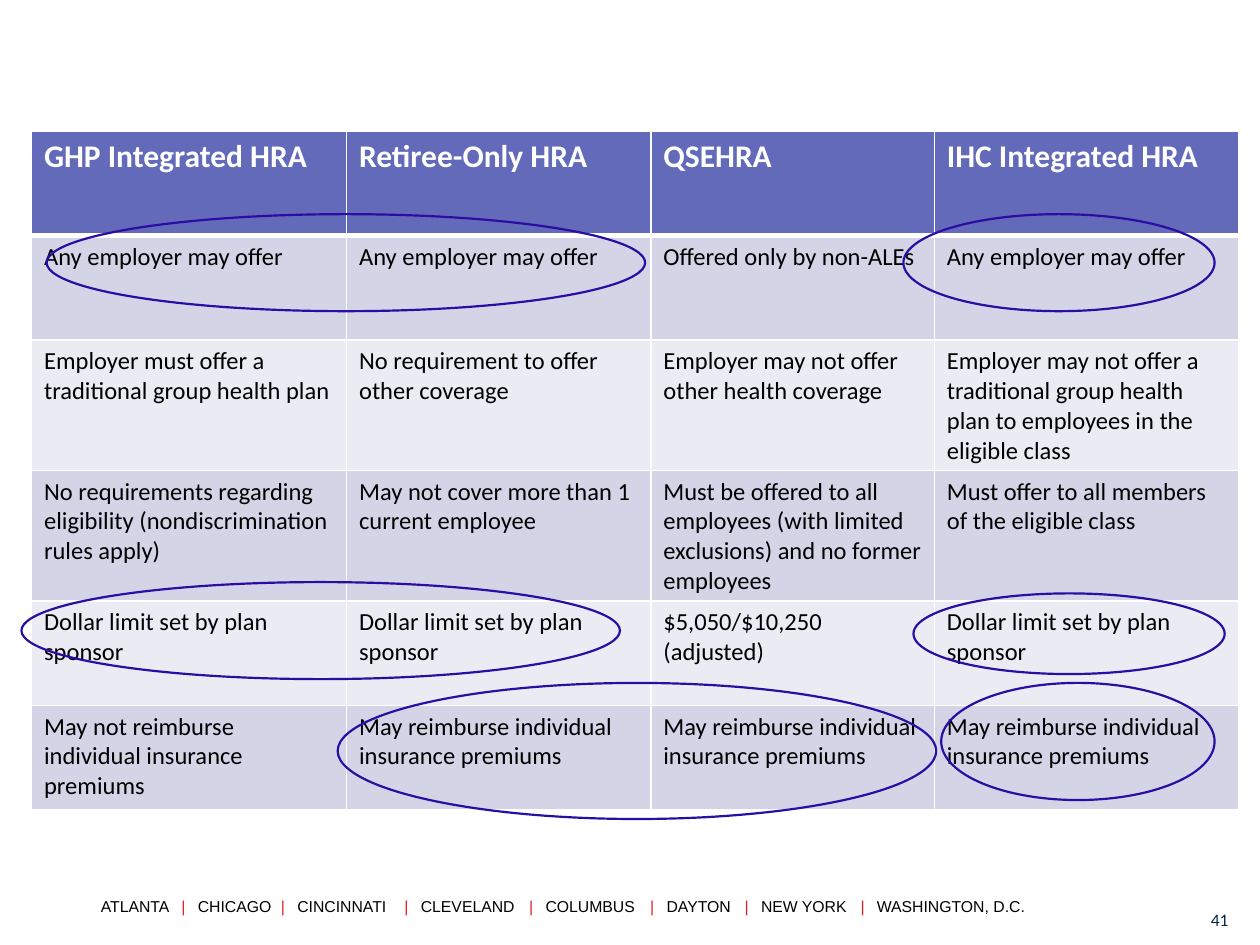
from dataclasses import dataclass

from lxml.etree import SubElement
from pptx import Presentation
from pptx.dml.color import RGBColor as RGB
from pptx.enum.shapes import MSO_SHAPE as SHAPE
from pptx.enum.text import MSO_ANCHOR as ANCHOR, PP_ALIGN as ALIGN
from pptx.oxml.ns import qn
from pptx.util import Inches, Pt

COLS, ROWS = 100, 75


@dataclass(frozen=True)
class Theme:
    white: str = "FFFFFF"
    black: str = "000000"
    header: str = "626AB9"
    bands: tuple = ("D3D4E6", "EAEBF3")
    ring: str = "2A0DA3"
    bar: str = "E31B23"
    number: str = "052B42"
    body_font: str = "Calibri"
    footer_font: str = "Arial"
    header_size: float = 18
    cell_size: float = 14
    footer_size: float = 9
    number_size: float = 10
    ring_width: float = 1.25
    border: float = 1
    header_rule: float = 3


HEADINGS = ["GHP Integrated HRA", "Retiree-Only HRA", "QSEHRA", "IHC Integrated HRA"]
ANY = "Any employer may offer"
LIMIT = "Dollar limit set by plan sponsor"
PREMIUMS = "May reimburse individual insurance premiums"
FEATURES = [
    [ANY, ANY, "Offered only by non-ALEs", ANY],
    ["Employer must offer a traditional group health plan",
     "No requirement to offer other coverage",
     "Employer may not offer other health coverage",
     "Employer may not offer a traditional group health plan to employees in the eligible class"],
    ["No requirements regarding eligibility (nondiscrimination rules apply)",
     "May not cover more than 1 current employee",
     "Must be offered to all employees (with limited exclusions) and no former employees",
     "Must offer to all members of the eligible class"],
    [LIMIT, LIMIT, "$5,050/$10,250 (adjusted)", LIMIT],
    ["May not reimburse individual insurance premiums", PREMIUMS, PREMIUMS, PREMIUMS],
]
RINGS = [
    (71.7, 17, 24.7, 7.7),
    (3.7, 17, 47.5, 7.7),
    (72.5, 47.1, 24.7, 6.4),
    (1.7, 46.2, 47.5, 7.7),
    (74.7, 54.2, 21.7, 9.3),
    (26.8, 54.2, 47.5, 10.8),
]
CITIES = ["ATLANTA", "CHICAGO", "CINCINNATI", "CLEVELAND",
          "COLUMBUS", "DAYTON", "NEW YORK", "WASHINGTON, D.C."]
BAR_STOPS = [6.4, 14.3, 24.1, 34, 43.6, 51.1, 60.3]
CITY_GAP = 1.3


class Deck:
    def __init__(self, theme):
        self.theme = theme
        self.prs = Presentation()
        self.prs.slide_width, self.prs.slide_height = Inches(10), Inches(7.5)
        self.s = self.prs.slides.add_slide(self.prs.slide_layouts[6])

    def x(self, columns):
        return round(self.prs.slide_width * columns / COLS)

    def y(self, rows):
        return round(self.prs.slide_height * rows / ROWS)

    def box(self, left, top, width, height):
        return self.x(left), self.y(top), self.x(width), self.y(height)

    def apply(self, target, **values):
        for name, value in values.items():
            setattr(target, name, value)

    def run(self, p, text, font, size, color, bold=False):
        r = p.add_run()
        r.text = text
        self.apply(r.font, name=font, size=Pt(size), bold=bold)
        r.font.color.rgb = RGB.from_string(color)

    def text(self, place, **frame):
        tf = self.s.shapes.add_textbox(*self.box(*place)).text_frame
        self.apply(tf, word_wrap=True, **frame)
        return tf.paragraphs[0]

    def borders(self, cell, bottom):
        tc_pr = cell._tc.get_or_add_tcPr()
        t = self.theme
        for side, width in zip("LRTB", (t.border, t.border, t.border, bottom)):
            ln = SubElement(tc_pr, qn(f"a:ln{side}"), w=str(Pt(width)))
            fill = SubElement(ln, qn("a:solidFill"))
            SubElement(fill, qn("a:srgbClr"), val=t.white)

    def cell(self, cell, text, fill, size, color, bold, bottom):
        self.borders(cell, bottom)
        cell.fill.solid()
        cell.fill.fore_color.rgb = RGB.from_string(fill)
        p = cell.text_frame.paragraphs[0]
        self.run(p, text, self.theme.body_font, size, color, bold)

    def table(self, left, top, widths, row_height, headings, rows):
        t = self.theme
        count = len(rows) + 1
        place = self.box(left, top, sum(widths), row_height * count)
        table = self.s.shapes.add_table(count, len(widths), *place).table
        for column, width in zip(table.columns, widths):
            column.width = self.x(width)
        for i, texts in enumerate([headings] + rows):
            if i == 0:
                style = dict(fill=t.header, size=t.header_size, color=t.white,
                             bold=True, bottom=t.header_rule)
            else:
                style = dict(fill=t.bands[(i - 1) % 2], size=t.cell_size,
                             color=t.black, bold=False, bottom=t.border)
            for j, text in enumerate(texts):
                self.cell(table.cell(i, j), text, **style)

    def ring(self, *place):
        sp = self.s.shapes.add_shape(SHAPE.OVAL, *self.box(*place))
        sp.shadow.inherit = False
        sp.fill.background()
        sp.line.color.rgb = RGB.from_string(self.theme.ring)
        sp.line.width = Pt(self.theme.ring_width)

    def footer(self, place, cities, stops, gap):
        t = self.theme
        inset = self.x(0.5)
        p = self.text(place, margin_left=inset, margin_right=inset,
                      margin_top=inset, margin_bottom=inset)
        tabs = SubElement(p._p.get_or_add_pPr(), qn("a:tabLst"))
        for stop in stops:
            for position in (stop, stop + gap):
                SubElement(tabs, qn("a:tab"), pos=str(self.x(position)), algn="l")
        for i, city in enumerate(cities):
            if i:
                self.run(p, "\t|\t", t.footer_font, t.footer_size, t.bar)
            self.run(p, city, t.footer_font, t.footer_size, t.black)

    def number(self, place, text):
        t = self.theme
        p = self.text(place, vertical_anchor=ANCHOR.MIDDLE)
        p.alignment = ALIGN.CENTER
        self.run(p, text, t.body_font, t.number_size, t.number)


def main():
    deck = Deck(Theme())
    deck.footer((7.5, 70.7, 90.1, 2.5), CITIES, BAR_STOPS, CITY_GAP)
    deck.number((93.6, 71, 6.4, 4), "41")
    deck.table(2.5, 10.4, [25, 24.15, 22.5, 24.15], 8.3, HEADINGS, FEATURES)
    for place in RINGS:
        deck.ring(*place)
    deck.prs.save("out.pptx")


if __name__ == "__main__":
    main()
